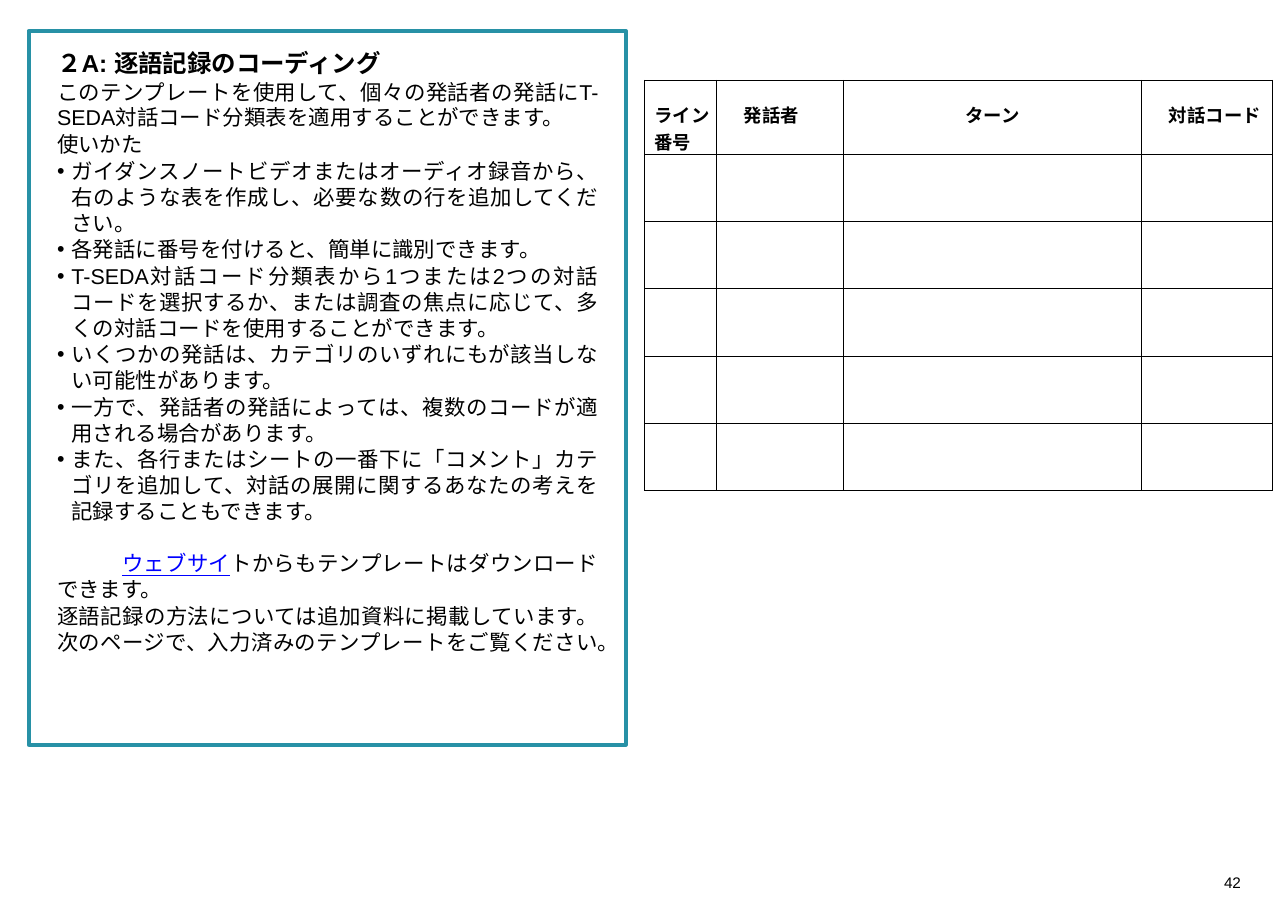
from lxml.etree import SubElement
from pptx import Presentation
from pptx.dml.color import RGBColor
from pptx.enum.shapes import MSO_SHAPE
from pptx.enum.text import PP_ALIGN
from pptx.oxml.ns import qn
from pptx.util import Inches, Pt

FONT = "Arial"
COLORS = {"text": "000000", "frame": "2791A6", "link": "0000FF", "grid": "000000"}

HEADING = "２A: 逐語記録のコーディング"
INTRO = [
    "このテンプレートを使用して、個々の発話者の発話にT-SEDA対話コード分類表を適用することができます。",
    "使いかた",
]
STEPS = [
    "ガイダンスノートビデオまたはオーディオ録音から、右のような表を作成し、必要な数の行を追加してください。",
    "各発話に番号を付けると、簡単に識別できます。",
    "T-SEDA対話コード分類表から1つまたは2つの対話コードを選択するか、または調査の焦点に応じて、多くの対話コードを使用することができます。",
    "いくつかの発話は、カテゴリのいずれにもが該当しない可能性があります。",
    "一方で、発話者の発話によっては、複数のコードが適用される場合があります。",
    "また、各行またはシートの一番下に「コメント」カテゴリを追加して、対話の展開に関するあなたの考えを記録することもできます。",
]
DOWNLOAD = ["ウェブサイ", "トからもテンプレートはダウンロードできます。"]
CLOSING = "逐語記録の方法については追加資料に掲載しています。次のページで、入力済みのテンプレートをご覧ください。"

# Header label, column width, label indent, alignment
COLUMNS = [
    ("ライン番号", 0.65, 0.09, PP_ALIGN.LEFT),
    ("発話者", 1.16, 0.25, PP_ALIGN.LEFT),
    ("ターン", 2.7, 0, PP_ALIGN.CENTER),
    ("対話コード", 1.19, 0.25, PP_ALIGN.LEFT),
]
ROW_COUNT = 6
ROW_HEIGHT = 0.61


def color(name):
    return RGBColor.from_string(COLORS[name])


def style(run, size, bold=False, ink="text"):
    run.font.name = FONT
    run.font.size = Pt(size)
    run.font.bold = bold
    run.font.color.rgb = color(ink)


def set_indent(paragraph, left, first=0):
    properties = paragraph._p.get_or_add_pPr()
    properties.set("marL", str(Inches(left)))
    properties.set("indent", str(Inches(first)))
    return properties


def add_guide_paragraph(frame, parts, size=14, bold=False, gap=0.7, left=0.01,
                        first=0, bullet=False):
    """Append a justified paragraph with one run for each part."""
    paragraph = frame.add_paragraph() if frame.text else frame.paragraphs[0]
    paragraph.alignment = PP_ALIGN.JUSTIFY
    paragraph.space_before = Pt(gap)
    properties = set_indent(paragraph, left, first)
    if bullet:
        SubElement(properties, qn("a:buFont"), typeface=FONT)
        SubElement(properties, qn("a:buChar"), char="•")
    for part in parts:
        run = paragraph.add_run()
        run.text = part
        style(run, size, bold)
    return paragraph


def add_guide(slide, left, top, width, height):
    """Framed instructions."""
    border = slide.shapes.add_shape(MSO_SHAPE.RECTANGLE, Inches(left), Inches(top),
                                    Inches(width), Inches(height))
    border.shadow.inherit = False
    border.fill.background()
    border.line.color.rgb = color("frame")
    border.line.width = Pt(2.5)

    guide = slide.shapes.add_textbox(Inches(left + 0.15), Inches(top + 0.11),
                                     Inches(width - 0.3), Inches(height - 1.26))
    frame = guide.text_frame
    frame.word_wrap = True
    add_guide_paragraph(frame, [HEADING], size=16, bold=True, gap=0)
    for sentence in INTRO:
        add_guide_paragraph(frame, [sentence])
    for step in STEPS:
        add_guide_paragraph(frame, [step], left=0.14, first=-0.13, bullet=True)
    download = add_guide_paragraph(frame, DOWNLOAD, gap=17.5, first=0.59)
    website = download.runs[0]
    website.font.color.rgb = color("link")
    website.font.underline = True
    add_guide_paragraph(frame, [CLOSING])


def add_cell_borders(cell):
    properties = cell._tc.get_or_add_tcPr()
    for side in ("lnL", "lnR", "lnT", "lnB"):
        line = SubElement(properties, qn(f"a:{side}"), w=str(Pt(0.75)))
        fill = SubElement(line, qn("a:solidFill"))
        SubElement(fill, qn("a:srgbClr"), val=COLORS["grid"])


def add_coding_table(slide, left, top):
    width = sum(column[1] for column in COLUMNS)
    table = slide.shapes.add_table(ROW_COUNT, len(COLUMNS), Inches(left), Inches(top),
                                   Inches(width), Inches(ROW_COUNT * ROW_HEIGHT)).table
    table.first_row = table.horz_banding = False
    for row in table.rows:
        row.height = Inches(ROW_HEIGHT)
    for cell in table.iter_cells():
        add_cell_borders(cell)
        cell.fill.background()
    for index, (label, column_width, indent, alignment) in enumerate(COLUMNS):
        table.columns[index].width = Inches(column_width)
        header = table.cell(0, index)
        header.margin_left = header.margin_right = header.margin_bottom = 0
        header.margin_top = Inches(0.19)
        paragraph = header.text_frame.paragraphs[0]
        paragraph.text = label
        paragraph.alignment = alignment
        set_indent(paragraph, indent)
        style(paragraph.runs[0], 12, bold=True)


def add_page_number(slide, left, top, width, height):
    number = slide.shapes.add_textbox(Inches(left), Inches(top), Inches(width), Inches(height))
    frame = number.text_frame
    frame.word_wrap = True
    frame.margin_left = frame.margin_right = frame.margin_top = frame.margin_bottom = 0
    frame.text = "42"
    set_indent(frame.paragraphs[0], 0.03)
    style(frame.paragraphs[0].runs[0], 10)


def main():
    presentation = Presentation()
    presentation.slide_width = Inches(11.69)
    presentation.slide_height = Inches(8.27)
    slide = presentation.slides.add_slide(presentation.slide_layouts[6])
    add_coding_table(slide, 5.85, 0.73)
    add_guide(slide, 0.26, 0.28, 5.42, 6.48)
    add_page_number(slide, 11.08, 7.93, 0.24, 0.17)
    presentation.save("out.pptx")


if __name__ == "__main__":
    main()
